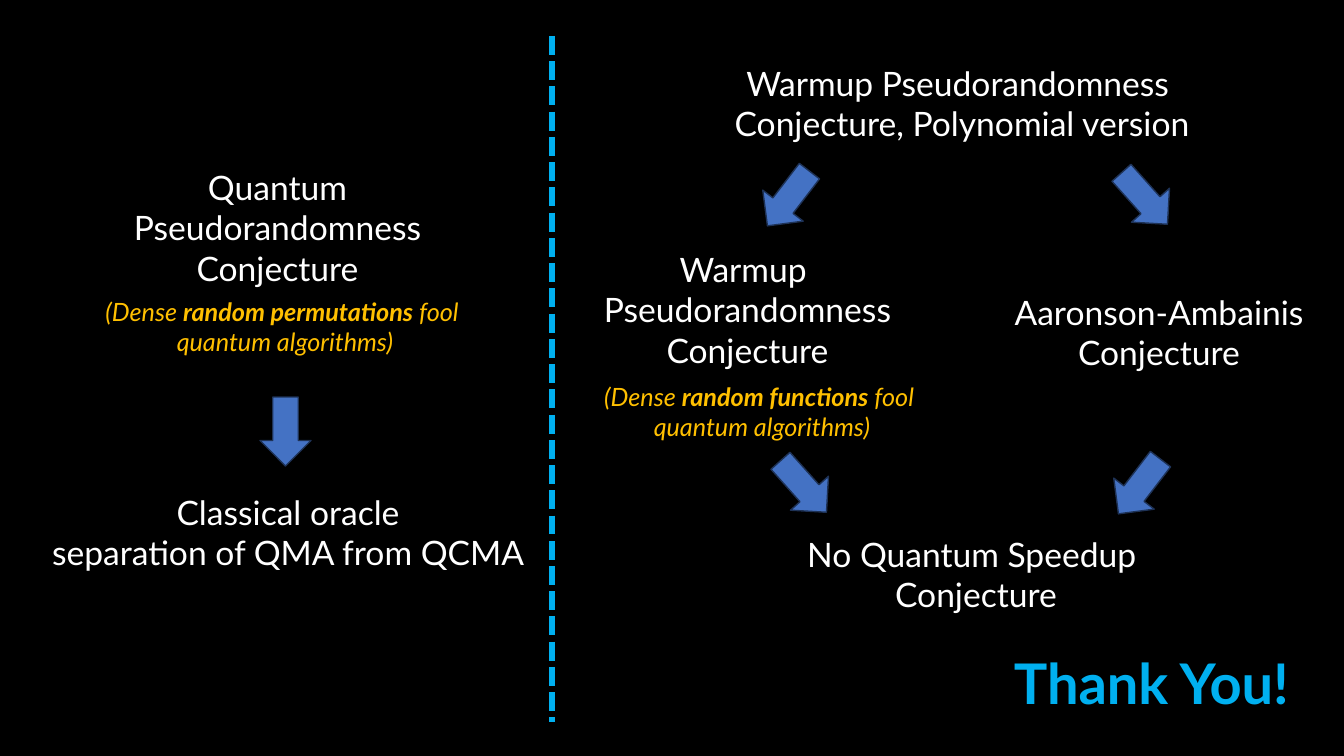
from lxml import etree
from pptx import Presentation
from pptx.dml.color import RGBColor
from pptx.enum.dml import MSO_LINE
from pptx.enum.shapes import MSO_CONNECTOR, MSO_SHAPE
from pptx.enum.text import MSO_AUTO_SIZE, PP_ALIGN
from pptx.oxml.ns import qn
from pptx.util import Emu, Pt

CENTER, RIGHT = PP_ALIGN.CENTER, PP_ALIGN.RIGHT
DOWN_ARROW = MSO_SHAPE.DOWN_ARROW
STRAIGHT = MSO_CONNECTOR.STRAIGHT
SQUARE_DOT = MSO_LINE.SQUARE_DOT
FIT_SHAPE = MSO_AUTO_SIZE.SHAPE_TO_FIT_TEXT

BLACK, WHITE, GOLD, CYAN = "000000", "FFFFFF", "FFC000", "00B0F0"
BLUE, NAVY = "4472C4", "1E3256"


def px(length):
    return Emu(round(length * 914400 / 100.8))


def color(value):
    return RGBColor.from_string(value)


class Page:
    font = "Lato"
    arrow_size = (51, 69)

    def __init__(self, deck):
        self.slide = deck.slides.add_slide(deck.slide_layouts[6])
        fill = self.slide.background.fill
        fill.solid()
        fill.fore_color.rgb = color(BLACK)

    def text(self, place, lines, size=24, ink=WHITE, italic=False, align=CENTER):
        """Each line is a list of (words, bold) spans."""
        box = self.slide.shapes.add_textbox(*map(px, place))
        frame = box.text_frame
        frame.word_wrap = True
        frame.auto_size = FIT_SHAPE
        para = frame.paragraphs[0]
        para.alignment = align
        for index, line in enumerate(lines):
            if index:
                para.add_line_break()
            for words, bold in line:
                span = para.add_run()
                span.text = words
                span.font.name = self.font
                span.font.size = Pt(size)
                span.font.bold = bold
                span.font.italic = italic
                span.font.color.rgb = color(ink)

    def statement(self, place, *lines):
        self.text(place, [[(line, False)] for line in lines])

    def note(self, left, top, subject):
        lines = [[("(Dense ", False), (subject, True), (" fool ", False)],
                 [("quantum algorithms)", False)]]
        self.text((left, top, 528, 72), lines, 18, GOLD, italic=True)

    def arrow(self, left, top, rotation=0):
        shape = self.slide.shapes.add_shape(
            DOWN_ARROW, *map(px, (left, top, *self.arrow_size)))
        shape.rotation = rotation
        shape.shadow.inherit = False
        shape.fill.solid()
        shape.fill.fore_color.rgb = color(BLUE)
        shape.line.color.rgb = color(NAVY)
        shape.line.width = Pt(1)

    def divider(self, x, top, bottom):
        line = self.slide.shapes.add_connector(
            STRAIGHT, px(x), px(top), px(x), px(bottom))
        line.line.color.rgb = color(CYAN)
        line.line.width = Pt(4.5)
        line.line.dash_style = SQUARE_DOT
        etree.SubElement(line._element.spPr, qn("a:effectLst"))


def main():
    deck = Presentation()
    deck.slide_width, deck.slide_height = px(1344), px(756)
    page = Page(deck)

    # Right side: conjectures
    page.statement((712, 529, 528, 92), "No Quantum Speedup ", "Conjecture")
    page.statement((939, 287, 440, 92), "Aaronson-Ambainis Conjecture")
    page.statement((518, 244, 459, 132), "Warmup ", "Pseudorandomness Conjecture")
    page.statement((654, 58, 616, 92),
                   "Warmup Pseudorandomness ", "Conjecture, Polynomial version")

    # Right side: implications
    to_left, to_right = 37.5, 318.2
    for left, top, rotation in [(763, 164, to_left), (1119, 164, to_right),
                                (1114, 452, to_left), (778, 452, to_right)]:
        page.arrow(left, top, rotation)

    page.divider(552, 36, 722)

    # Left side
    page.statement((48, 162, 459, 132), "Quantum", "Pseudorandomness Conjecture")
    page.note(21, 291, "random permutations")
    page.arrow(260, 397)
    page.statement((24, 487, 528, 92),
                   "Classical oracle", "separation of QMA from QCMA")

    # Warmup note and closing words
    page.note(498, 376, "random functions")
    page.text((963, 644, 336, 78), [[("Thank You!", True)]], 40, CYAN, align=RIGHT)

    deck.save("out.pptx")


if __name__ == "__main__":
    main()
